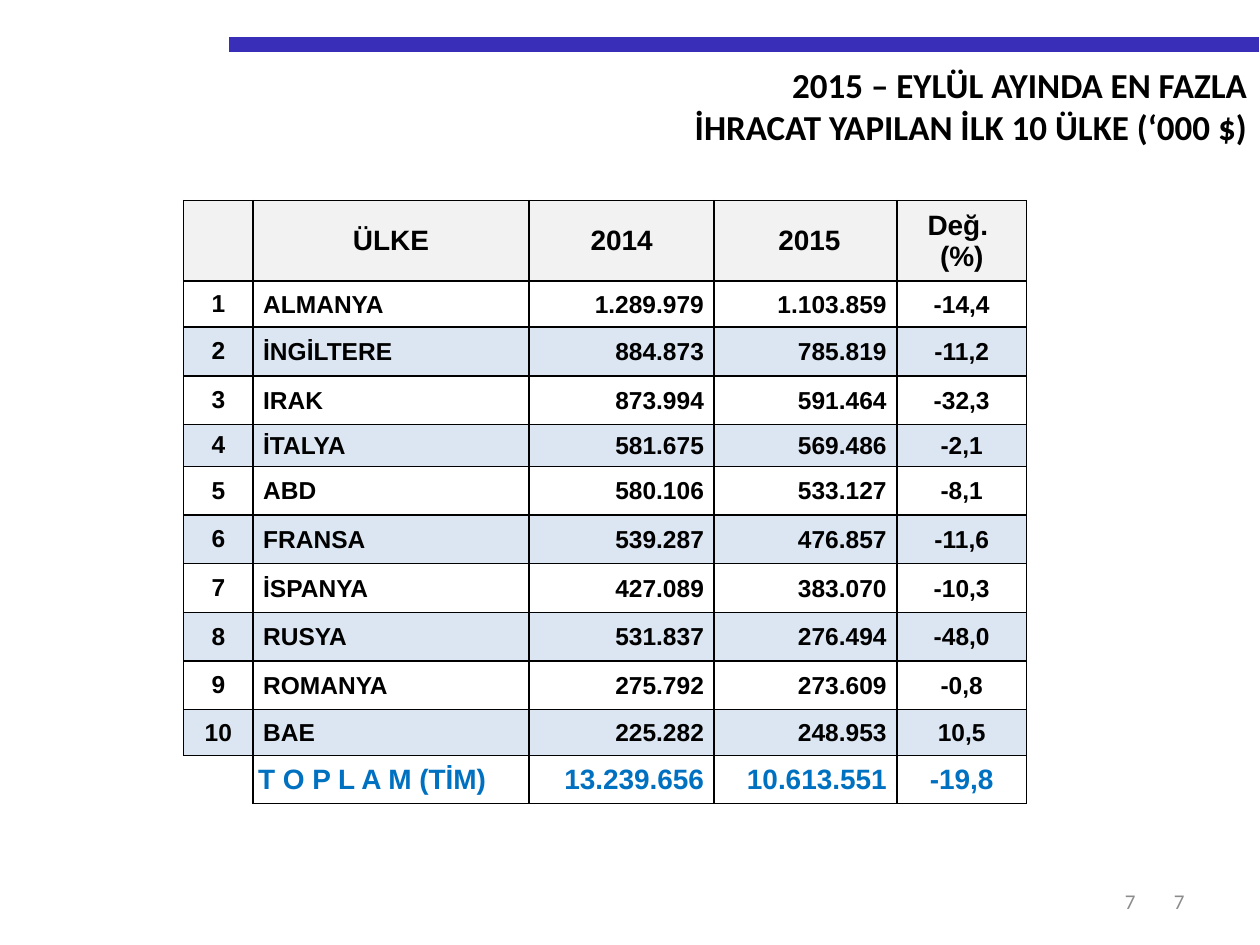
from dataclasses import dataclass
from typing import NamedTuple

from lxml import etree
from pptx import Presentation
from pptx.dml.color import RGBColor
from pptx.enum import shapes, text
from pptx.oxml import ns
from pptx.util import Pt

LEFT, CENTER, RIGHT = text.PP_ALIGN.LEFT, text.PP_ALIGN.CENTER, text.PP_ALIGN.RIGHT
TOP, MIDDLE = text.MSO_ANCHOR.TOP, text.MSO_ANCHOR.MIDDLE


@dataclass(frozen=True)
class Theme:
    heading_font: str = "Calibri"
    table_font: str = "Arial"
    ink: str = "000000"
    total: str = "0070C0"
    rule: str = "382EB8"
    page_number: str = "8C8C8C"
    header_fill: str = "F2F2F2"
    band_fill: str = "DCE6F2"
    title_size: float = 20
    large_size: float = 16
    body_size: float = 14
    number_size: float = 12
    rule_width: float = 8.5
    border_width: float = 1


class Country(NamedTuple):
    rank: str
    name: str
    y2014: str
    y2015: str
    change: str


class Insets(NamedTuple):
    left: float
    top: float
    right: float
    bottom: float


THEME = Theme()
HEADER = Country("", "ÜLKE", "2014", " 2015", "Değ. \n(%)")
COUNTRIES = [
    Country("1", "ALMANYA", "1.289.979", "1.103.859", "-14,4"),
    Country("2", "İNGİLTERE", "884.873", "785.819", "-11,2"),
    Country("3", "IRAK", "873.994", "591.464", "-32,3"),
    Country("4", "İTALYA", "581.675", "569.486", "-2,1"),
    Country("5", "ABD", "580.106", "533.127", "-8,1"),
    Country("6", "FRANSA", "539.287", "476.857", "-11,6"),
    Country("7", "İSPANYA", "427.089", "383.070", "-10,3"),
    Country("8", "RUSYA", "531.837", "276.494", "-48,0"),
    Country("9", "ROMANYA", "275.792", "273.609", "-0,8"),
    Country("10", "BAE", "225.282", "248.953", "10,5"),
]
TOTAL = Country("", "T O P L A M (TİM)", "13.239.656", "10.613.551", "-19,8")

COLUMN_WIDTHS = [39.6, 157.7, 105.8, 104.4, 74.2]
ROW_HEIGHTS = [46, 26.3, 27.8, 27.8, 23.8] + [27.8] * 5 + [26.3, 27.5]
COLUMN_ALIGNS = [CENTER, LEFT, RIGHT, RIGHT, CENTER]
ROOMY = Insets(7.2, 3.6, 7.2, 3.6)
COLUMN_INSETS = [ROOMY, Insets(5.8, 0.7, 0.7, 0), Insets(0.7, 0.7, 5.8, 0),
                 Insets(0.7, 0.7, 5.8, 0), Insets(0.7, 0.7, 0.7, 0)]
TOTAL_NAME_INSETS = Insets(2.9, 0.7, 0.7, 0)


def write(frame, content: str, *, size: float, font: str, color: str = THEME.ink,
          bold: bool = False, align=LEFT) -> None:
    """Write one paragraph for each line of content."""
    for index, line in enumerate(content.split("\n")):
        paragraph = frame.paragraphs[0] if index == 0 else frame.add_paragraph()
        paragraph.alignment = align
        run = paragraph.add_run()
        run.text = line
        run.font.size = Pt(size)
        run.font.name = font
        run.font.bold = bold
        run.font.color.rgb = RGBColor.from_string(color)


def set_borders(cell, sides: str) -> None:
    """Draw the sides named (L, R, T, B) and hide the others."""
    properties = cell._tc.get_or_add_tcPr()
    for index, side in enumerate("LRTB"):
        line = etree.Element(ns.qn(f"a:ln{side}"), w=str(Pt(THEME.border_width)))
        if side in sides:
            fill = etree.SubElement(line, ns.qn("a:solidFill"))
            etree.SubElement(fill, ns.qn("a:srgbClr"), val=THEME.ink)
        else:
            etree.SubElement(line, ns.qn("a:noFill"))
        properties.insert(index, line)


def fill_cell(cell, content: str, *, insets: Insets, fill: str = "",
              sides: str = "LRTB", **text_format) -> None:
    cell.vertical_anchor = MIDDLE
    cell.margin_left, cell.margin_top, cell.margin_right, cell.margin_bottom = map(Pt, insets)
    if fill:
        cell.fill.solid()
        cell.fill.fore_color.rgb = RGBColor.from_string(fill)
    else:
        cell.fill.background()
    set_borders(cell, sides)
    if content:
        write(cell.text_frame, content, font=THEME.table_font, bold=True, **text_format)


def add_page_number(slide, right: float) -> None:
    width = 150
    box = slide.shapes.add_textbox(Pt(right - width), Pt(500.5), Pt(width), Pt(28.8))
    box.text_frame.word_wrap = True
    box.text_frame.vertical_anchor = MIDDLE
    write(box.text_frame, "7", size=THEME.number_size, font=THEME.heading_font,
          color=THEME.page_number, align=RIGHT)


def add_rule(slide) -> None:
    y = Pt(25.4)
    rule = slide.shapes.add_connector(shapes.MSO_CONNECTOR.STRAIGHT, Pt(131), y, Pt(719.5), y)
    rule.line.width = Pt(THEME.rule_width)
    rule.line.color.rgb = RGBColor.from_string(THEME.rule)
    etree.SubElement(rule._element.spPr, ns.qn("a:effectLst"))


def add_title(slide) -> None:
    title = slide.shapes.title
    title.left, title.top, title.width, title.height = Pt(76.3), Pt(32.4), Pt(643.7), Pt(55.4)
    frame = title.text_frame
    frame.word_wrap = True
    frame.auto_size = text.MSO_AUTO_SIZE.NONE
    frame.vertical_anchor = TOP
    write(frame, "2015 – EYLÜL AYINDA EN FAZLA\nİHRACAT YAPILAN İLK 10 ÜLKE (‘000 $)",
          size=THEME.title_size, font=THEME.heading_font, bold=True, align=RIGHT)


def add_export_table(slide) -> None:
    exports = slide.shapes.add_table(
        len(ROW_HEIGHTS), len(COLUMN_WIDTHS), Pt(105), Pt(114.7),
        Pt(sum(COLUMN_WIDTHS)), Pt(sum(ROW_HEIGHTS))).table
    exports.first_row = exports.horz_banding = False
    for column, width in zip(exports.columns, COLUMN_WIDTHS):
        column.width = Pt(width)
    for row, height in zip(exports.rows, ROW_HEIGHTS):
        row.height = Pt(height)

    # Header row
    for column, label in enumerate(HEADER):
        fill_cell(exports.cell(0, column), label, insets=ROOMY, fill=THEME.header_fill,
                  size=THEME.large_size, align=CENTER)

    # Countries, every second one tinted
    for row, country in enumerate(COUNTRIES, start=1):
        for column, value in enumerate(country):
            fill_cell(exports.cell(row, column), value, insets=COLUMN_INSETS[column],
                      fill="" if row % 2 else THEME.band_fill,
                      size=THEME.body_size, align=COLUMN_ALIGNS[column])

    # Total row, with an open corner under the ranks
    last = len(ROW_HEIGHTS) - 1
    total_insets = [Insets(0, 0, 0, 0), TOTAL_NAME_INSETS, *COLUMN_INSETS[2:]]
    for column, value in enumerate(TOTAL):
        fill_cell(exports.cell(last, column), value, insets=total_insets[column],
                  sides="LRTB" if column else "RT", size=THEME.large_size,
                  color=THEME.total, align=COLUMN_ALIGNS[column])


def main() -> None:
    deck = Presentation()
    deck.slide_width, deck.slide_height = Pt(720), Pt(540)
    slide = deck.slides.add_slide(deck.slide_layouts[5])
    add_rule(slide)
    for right in (684, 656):
        add_page_number(slide, right)
    add_title(slide)
    add_export_table(slide)
    deck.save("out.pptx")


if __name__ == "__main__":
    main()
